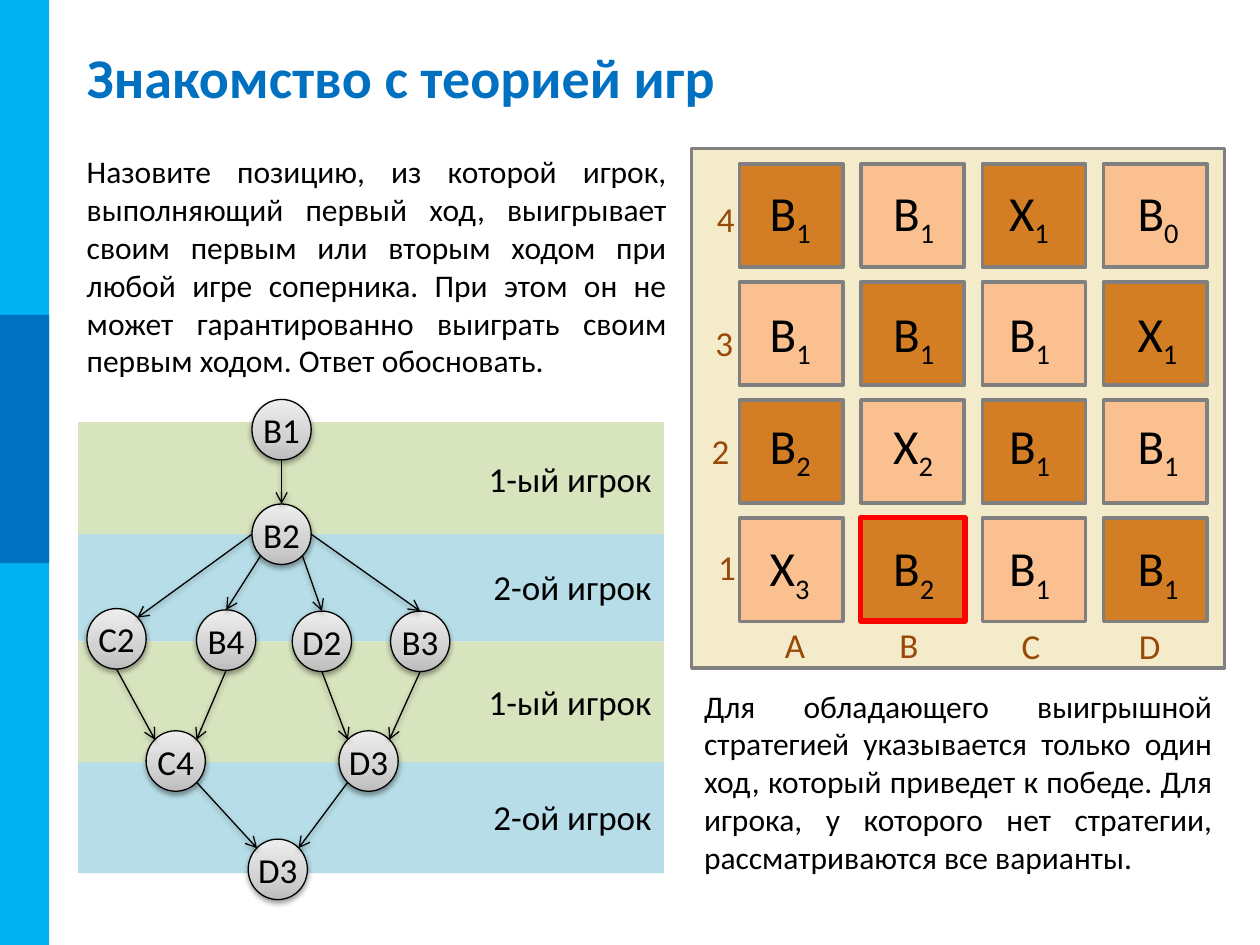
from copy import deepcopy
from typing import NamedTuple

from pptx import Presentation
from pptx.dml.color import RGBColor
from pptx.enum.shapes import MSO_CONNECTOR, MSO_SHAPE
from pptx.enum.text import MSO_ANCHOR, PP_ALIGN
from pptx.oxml import parse_xml
from pptx.oxml.ns import nsdecls, qn
from pptx.util import Inches, Pt

FONT = "Calibri"
BLACK, BLUE, BROWN, GRAY = "000000", "0070C0", "984807", "808080"
GREEN_BAND, BLUE_BAND = "D7E4BD", "B7DEE8"
DARK, LIGHT = "D37E24", "FAC090"
NODE_W, NODE_H = 0.47, 0.48
CELL = 0.82


class Band(NamedTuple):
    top: float
    height: float
    fill: str
    text: str


class Node(NamedTuple):
    left: float
    top: float
    text: str


class Edge(NamedTuple):
    start: str
    start_site: str
    end: str
    end_site: str


class Label(NamedTuple):
    left: float
    top: float
    text: str


BANDS = [
    Band(6.03, 0.9, BLUE_BAND, "2-ой игрок"),
    Band(5.09, 0.96, GREEN_BAND, "1-ый игрок"),
    Band(4.22, 0.87, BLUE_BAND, "2-ой игрок"),
    Band(3.35, 0.89, GREEN_BAND, "1-ый игрок"),
]
NODES = {
    "start": Node(2, 3.17, "B1"),
    "first": Node(2, 4, "B2"),
    "reply_c2": Node(0.69, 4.83, "C2"),
    "reply_b4": Node(1.56, 4.84, "B4"),
    "reply_d2": Node(2.32, 4.85, "D2"),
    "reply_b3": Node(3.1, 4.85, "B3"),
    "second_c4": Node(1.16, 5.8, "C4"),
    "second_d3": Node(2.69, 5.8, "D3"),
    "finish": Node(1.97, 6.66, "D3"),
}
# Points on a node's outline, as fractions of its width and height
SITES = {
    "top": (0.5, 0), "bottom": (0.5, 1), "left": (0, 0.5), "right": (1, 0.5),
    "top left": (0.15, 0.15), "top right": (0.85, 0.15),
    "bottom left": (0.15, 0.85), "bottom right": (0.85, 0.85),
}
EDGES = [
    Edge("start", "bottom", "first", "top"),
    Edge("first", "left", "reply_c2", "top right"),
    Edge("first", "bottom left", "reply_b4", "top"),
    Edge("first", "bottom right", "reply_d2", "top"),
    Edge("first", "right", "reply_b3", "top"),
    Edge("reply_c2", "bottom", "second_c4", "top left"),
    Edge("reply_b4", "bottom", "second_c4", "top right"),
    Edge("reply_d2", "bottom", "second_d3", "top left"),
    Edge("reply_b3", "bottom", "second_d3", "top right"),
    Edge("second_c4", "bottom right", "finish", "top left"),
    Edge("second_d3", "bottom left", "finish", "top right"),
]
# Board rows from 4 down to 1, columns from A to D
POSITIONS = ["В1 В1 Х1 В0", "В1 В1 В1 Х1", "В2 X2 В1 В1", "Х3 В2 В1 В1"]
POSITION_LEFTS = [6.01, 6.99, 7.91, 8.93]
POSITION_TOPS = [1.4, 2.36, 3.25, 4.22]
BOARD_LABELS = [
    Label(6.13, 4.9, "A"), Label(7.04, 4.9, "B"),
    Label(8.01, 4.91, "C"), Label(8.94, 4.91, "D"),
    Label(5.6, 4.28, "1"), Label(5.55, 3.36, "2"),
    Label(5.58, 2.5, "3"), Label(5.59, 1.52, "4"),
]
TASK = ("Назовите позицию, из которой игрок, выполняющий первый ход, выигрывает "
        "своим первым или вторым ходом при любой игре соперника. При этом он не "
        "может гарантированно выиграть своим первым ходом. Ответ обосновать.")
HINT = ("Для обладающего выигрышной стратегией указывается только один ход, "
        "который приведет к победе. Для игрока, у которого нет стратегии, "
        "рассматриваются все варианты.")


def rgb(color: str) -> RGBColor:
    return RGBColor.from_string(color)


def style_run(r, size: float, color: str = BLACK, bold: bool = False) -> None:
    r.font.name, r.font.size, r.font.bold = FONT, Pt(size), bold
    r.font.color.rgb = rgb(color)


def set_text(sp, text: str, size: float, align, color: str = BLACK) -> None:
    p = sp.text_frame.paragraphs[0]
    p.text, p.alignment = text, align
    style_run(p.runs[0], size, color)


def add_rect(s, left, top, width, height, fill=None, line=None, line_width=2):
    sp = s.shapes.add_shape(MSO_SHAPE.RECTANGLE, Inches(left), Inches(top),
                            Inches(width), Inches(height))
    sp.shadow.inherit = False
    if fill:
        sp.fill.solid()
        sp.fill.fore_color.rgb = rgb(fill)
    else:
        sp.fill.background()
    if line:
        sp.line.color.rgb = rgb(line)
        sp.line.width = Pt(line_width)
    else:
        sp.line.fill.background()
    return sp


def add_text(s, left, top, width, height, text, size, color=BLACK,
             align=PP_ALIGN.LEFT, wrap=False):
    sp = s.shapes.add_textbox(Inches(left), Inches(top), Inches(width), Inches(height))
    sp.text_frame.word_wrap = wrap
    set_text(sp, text, size, align, color)
    return sp


def outline_with_shadow(sp) -> None:
    sp.line.color.rgb = rgb(BLACK)
    sp.line.width = Pt(0.75)
    sp._element.spPr.append(parse_xml(
        f'<a:effectLst {nsdecls("a")}><a:outerShdw blurRad="{Pt(3.1)}" dist="{Pt(1.6)}" '
        'dir="5400000" rotWithShape="0"><a:srgbClr val="000000"><a:alpha val="38000"/>'
        '</a:srgbClr></a:outerShdw></a:effectLst>'))


def add_node(s, node: Node) -> None:
    sp = s.shapes.add_shape(MSO_SHAPE.OVAL, Inches(node.left), Inches(node.top),
                            Inches(NODE_W), Inches(NODE_H))
    sp.fill.gradient()
    sp.fill.gradient_angle = 90
    stop_list = sp._element.spPr.find(".//" + qn("a:gsLst"))
    stop_list.append(deepcopy(stop_list[-1]))
    shades = [(0, "BDBDBD"), (0.35, "D1D1D1"), (1, "EEEEEE")]
    for stop, (position, color) in zip(sp.fill.gradient_stops, shades):
        stop.position = position
        stop.color.rgb = rgb(color)
    outline_with_shadow(sp)
    tf = sp.text_frame
    tf.margin_left = tf.margin_right = tf.margin_top = tf.margin_bottom = 0
    tf.vertical_anchor = MSO_ANCHOR.MIDDLE
    tf.word_wrap = False
    set_text(sp, node.text, 20, PP_ALIGN.CENTER)


def site_point(name: str, site: str) -> tuple:
    node, (fx, fy) = NODES[name], SITES[site]
    return Inches(node.left + fx * NODE_W), Inches(node.top + fy * NODE_H)


def add_arrow(s, edge: Edge) -> None:
    c = s.shapes.add_connector(MSO_CONNECTOR.STRAIGHT,
                               *site_point(edge.start, edge.start_site),
                               *site_point(edge.end, edge.end_site))
    outline_with_shadow(c)
    c.line._get_or_add_ln().append(parse_xml(f'<a:tailEnd {nsdecls("a")} type="arrow"/>'))


def add_board(s) -> None:
    add_rect(s, 5.49, 1.18, 4.23, 4.12, "F4EBCA", GRAY)
    for row, line in enumerate(POSITIONS):
        for col, (letter, index) in enumerate(line.split()):
            fill = LIGHT if (row + col) % 2 else DARK
            add_rect(s, 5.87 + 0.963 * col, 1.3 + 0.937 * row, CELL, CELL, fill, GRAY)
            sp = add_text(s, POSITION_LEFTS[col], POSITION_TOPS[row], 0.55, 0.57, letter, 28)
            r = sp.text_frame.paragraphs[0].add_run()
            r.text = index
            style_run(r, 28)
            r._r.get_or_add_rPr().set("baseline", "-25000")
    for label in BOARD_LABELS:
        add_text(s, label.left, label.top, 0.35, 0.44, label.text, 20, BROWN)
    # Starting square of the answer
    add_rect(s, 6.83, 4.11, 0.83, CELL, line="FF0000", line_width=3)


def main() -> None:
    prs = Presentation()
    prs.slide_width, prs.slide_height = Inches(10), Inches(7.5)
    s = prs.slides.add_slide(prs.slide_layouts[5])

    # Side stripe
    add_rect(s, 0, 0, 0.39, 7.5, "00B0F0")
    add_rect(s, 0, 2.5, 0.39, 1.97, BLUE)

    # Title
    title = s.shapes.title
    title.left, title.top = Inches(0.59), Inches(0.3)
    title.width, title.height = Inches(9.06), Inches(0.61)
    title.text_frame.text = "Знакомство с теорией игр"
    title.text_frame.vertical_anchor = MSO_ANCHOR.MIDDLE
    p = title.text_frame.paragraphs[0]
    p.alignment = PP_ALIGN.LEFT
    style_run(p.runs[0], 32, BLUE, bold=True)

    # Game tree
    for band in BANDS:
        sp = add_rect(s, 0.62, band.top, 4.65, band.height, band.fill)
        sp.text_frame.vertical_anchor = MSO_ANCHOR.MIDDLE
        set_text(sp, band.text, 20, PP_ALIGN.RIGHT)
    for node in NODES.values():
        add_node(s, node)
    for edge in EDGES:
        add_arrow(s, edge)

    add_board(s)

    # Task and hint
    add_text(s, 0.59, 1.16, 4.8, 1.92, TASK, 18, align=PP_ALIGN.JUSTIFY, wrap=True)
    add_text(s, 5.49, 5.4, 4.23, 1.62, HINT, 18, align=PP_ALIGN.JUSTIFY, wrap=True)

    prs.save("out.pptx")


if __name__ == "__main__":
    main()
